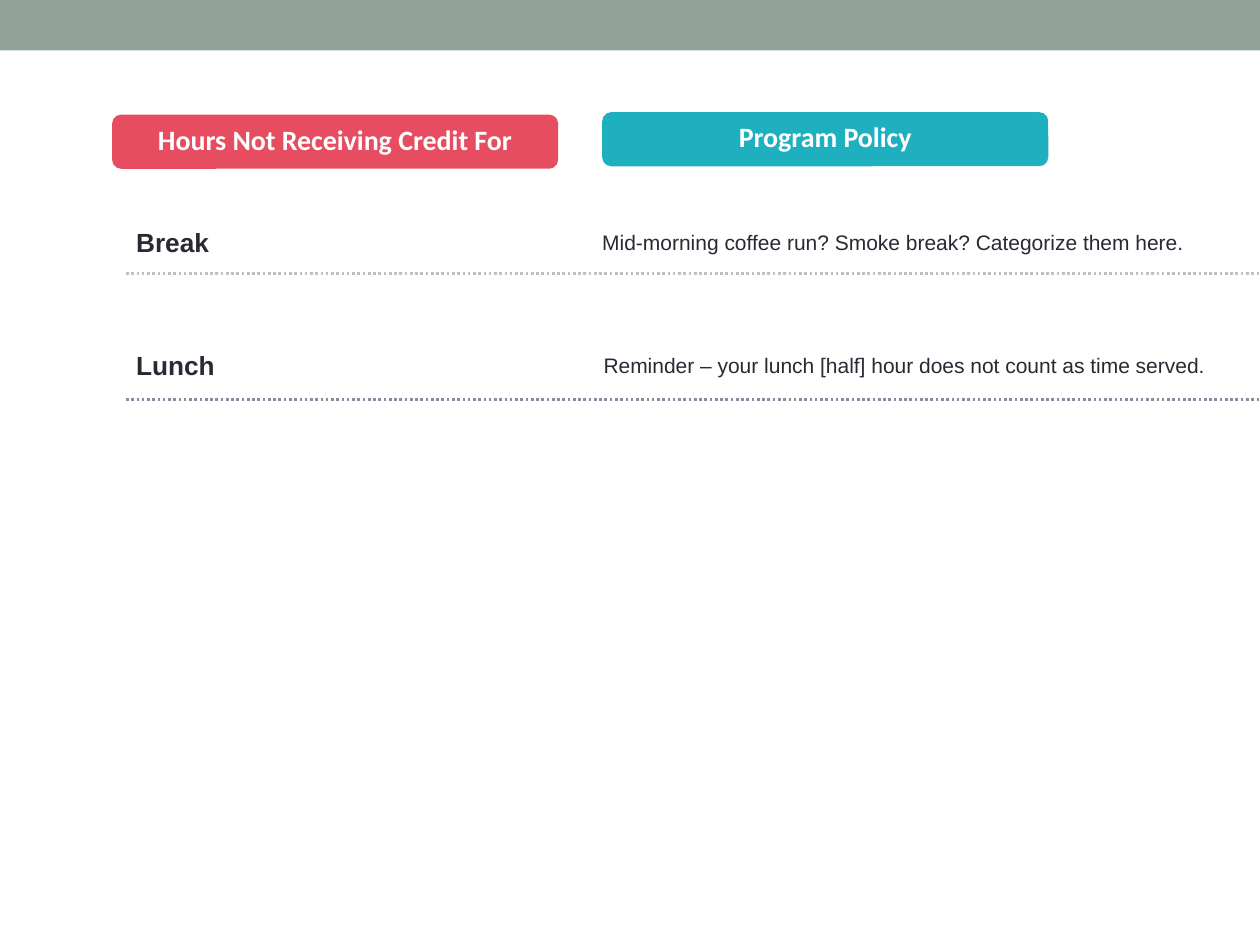
from lxml import etree
from pptx import Presentation
from pptx import util as u
from pptx.dml.color import RGBColor
from pptx.enum import dml, shapes, text
from pptx.oxml.ns import qn

BAND = RGBColor(0x93, 0xA2, 0x99)
RED = RGBColor(0xE7, 0x4D, 0x61)
TEAL = RGBColor(0x1F, 0xB0, 0xBF)
INK = RGBColor(0x29, 0x29, 0x34)
WHITE = RGBColor(0xFF, 0xFF, 0xFF)
LIGHT_RULE = RGBColor(0xBF, 0xBF, 0xBF)
DARK_RULE = RGBColor(0x8A, 0x8A, 0xA3)

# Grid in inches: two columns, rows closed by a dotted rule
SLIDE_W, SLIDE_H = 10, 7.5
HEADER_W, HEADER_H = 3.54, 0.43
CATEGORY_X, POLICY_X = 1.08, 4.78
RULE_LEFT, RULE_RIGHT = 1, 12.33
FIRST_RULE_Y, ROW_PITCH = 2.17, 1

# Category, policy, policy left edge, text centre above the rule, rule colour
ROWS = [
    ("Break", "Mid-morning coffee run? Smoke break? Categorize them here.",
     POLICY_X, 0.25, LIGHT_RULE),
    ("Lunch", "Reminder – your lunch [half] hour does not count as time served.",
     POLICY_X + 0.01, 0.27, DARK_RULE),
]


def write(frame, wording, font, size, color, bold=False):
    frame.text = wording
    frame.word_wrap = True
    frame.vertical_anchor = text.MSO_ANCHOR.MIDDLE
    frame.margin_left = frame.margin_right = 0
    frame.margin_top = frame.margin_bottom = 0
    style = frame.paragraphs[0].runs[0].font
    style.name, style.size, style.bold = font, u.Pt(size), bold
    style.color.rgb = color


def add_block(slide, preset, left, top, width, height, color):
    block = slide.shapes.add_shape(
        preset, *map(u.Inches, (left, top, width, height)))
    block.shadow.inherit = False
    block.fill.solid()
    block.fill.fore_color.rgb = color
    block.line.fill.background()
    return block


def add_header(slide, wording, left, top, color):
    header = add_block(slide, shapes.MSO_SHAPE.ROUNDED_RECTANGLE,
                       left, top, HEADER_W, HEADER_H, color)
    frame = header.text_frame
    write(frame, wording, "Calibri", 16, WHITE, bold=True)
    frame.margin_bottom = u.Inches(0.04)
    frame.paragraphs[0].alignment = text.PP_ALIGN.CENTER


def add_label(slide, wording, left, centre, width, height, size, bold=False):
    label = slide.shapes.add_textbox(
        *map(u.Inches, (left, centre - height / 2, width, height)))
    write(label.text_frame, wording, "Arial", size, INK, bold)


def add_rule(slide, y, color):
    rule = slide.shapes.add_connector(
        shapes.MSO_CONNECTOR.STRAIGHT,
        *map(u.Inches, (RULE_LEFT, y, RULE_RIGHT, y)))
    rule.line.color.rgb = color
    rule.line.width = u.Pt(1.5)
    rule.line.dash_style = dml.MSO_LINE.ROUND_DOT
    etree.SubElement(rule._element.spPr, qn("a:effectLst"))


def main():
    deck = Presentation()
    deck.slide_width, deck.slide_height = u.Inches(SLIDE_W), u.Inches(SLIDE_H)
    slide = deck.slides.add_slide(deck.slide_layouts[6])

    # Top band
    add_block(slide, shapes.MSO_SHAPE.RECTANGLE, 0, 0, SLIDE_W, 0.4, BAND)

    # Column headers
    add_header(slide, "Hours Not Receiving Credit For", 0.89, 0.91, RED)
    add_header(slide, "Program Policy", POLICY_X, 0.89, TEAL)

    # Policy rows
    for row, (category, policy, policy_x, rise, color) in enumerate(ROWS):
        rule_y = FIRST_RULE_Y + row * ROW_PITCH
        centre = rule_y - rise
        add_label(slide, category, CATEGORY_X, centre, 3.19, 0.25, 15, bold=True)
        add_label(slide, policy, policy_x, centre, 7.33, 0.2, 12)
        add_rule(slide, rule_y, color)

    deck.save("out.pptx")


if __name__ == "__main__":
    main()
